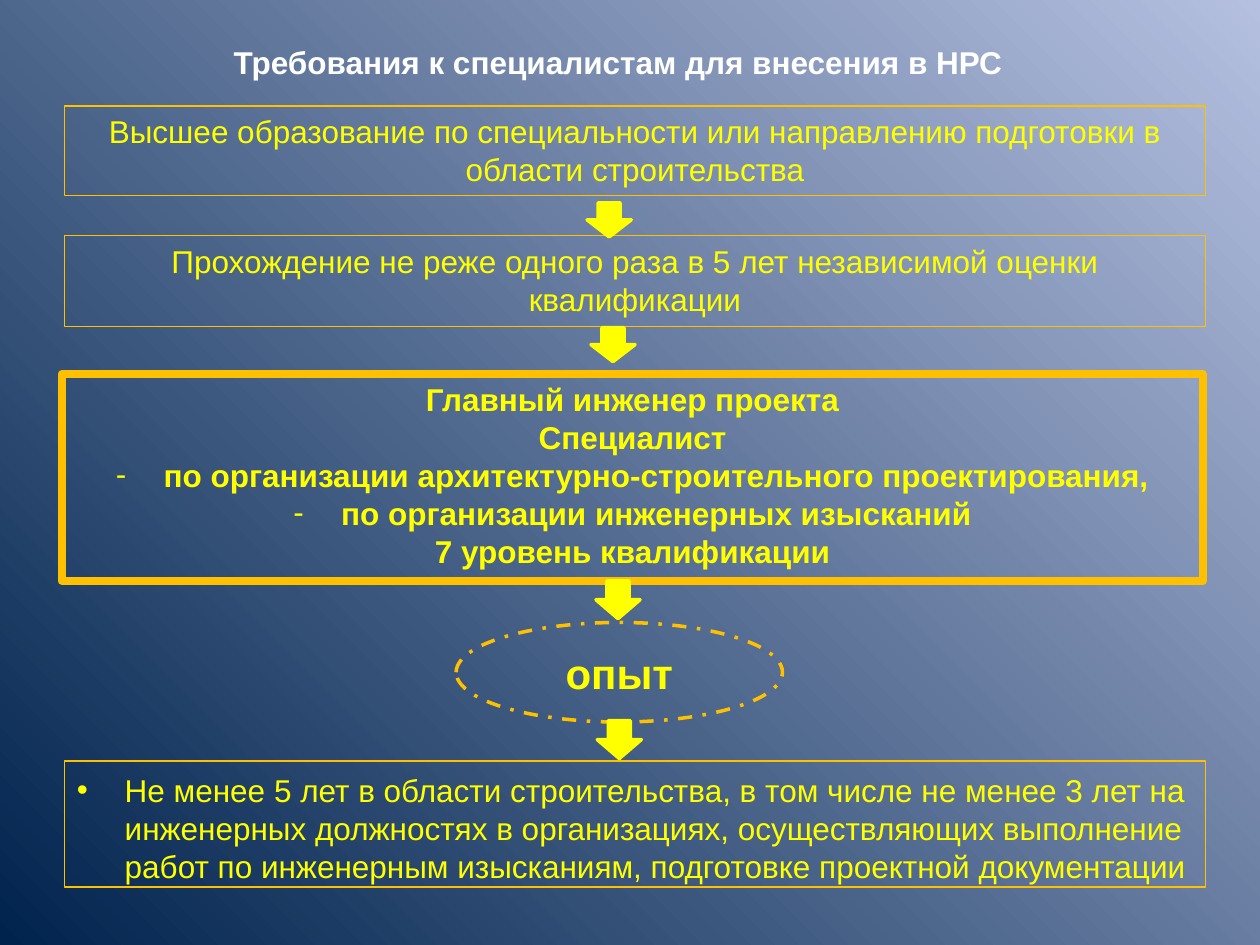
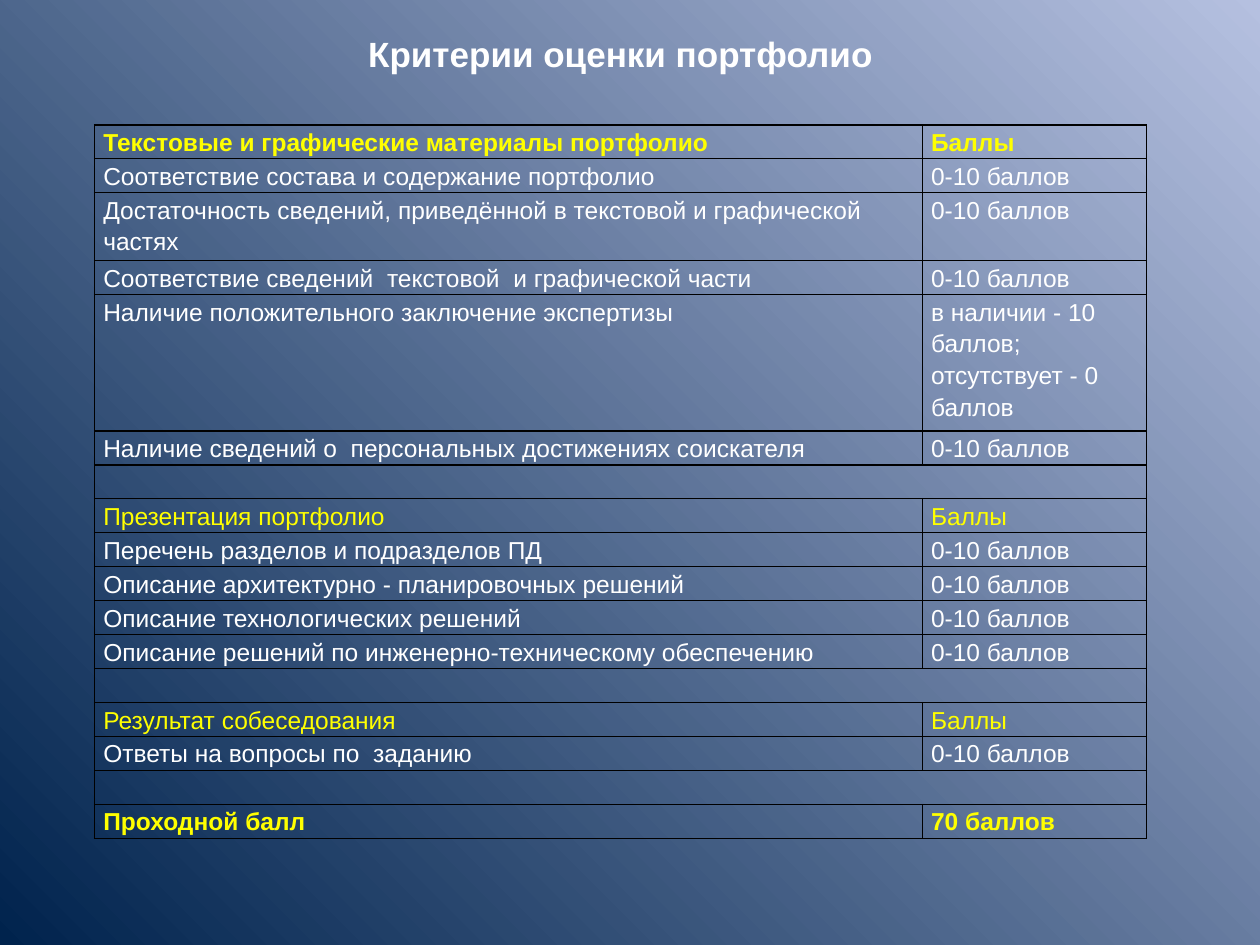
from dataclasses import dataclass
from typing import Optional

from lxml import etree
from pptx import Presentation
from pptx.dml.color import RGBColor
from pptx.enum import dml, shapes, text
from pptx.oxml import parse_xml
from pptx.oxml.ns import qn
from pptx.util import Inches, Pt

FONT = "Arial"
YELLOW, GOLD, WHITE, BLACK = "FFFF00", "FFC000", "FFFFFF", "000000"
GRADIENT = [(0, "BFC9E5"), (0, "B5C0E0"), (100, "00234D")]
A_NS = "http://schemas.openxmlformats.org/drawingml/2006/main"
CENTER, LEFT = text.PP_ALIGN.CENTER, text.PP_ALIGN.LEFT
TOP, MIDDLE = text.MSO_ANCHOR.TOP, text.MSO_ANCHOR.MIDDLE
RECT, OVAL = shapes.MSO_SHAPE.RECTANGLE, shapes.MSO_SHAPE.OVAL
ROW_H = 0.27
POINTS = "0-10 баллов"


@dataclass
class Line:
    text: str
    bullet: str = ""


@dataclass
class Box:
    left: float
    top: float
    width: float
    height: float
    lines: list[Line]
    size: float = 18
    bold: bool = False
    border: float = 0.75
    shape: shapes.MSO_SHAPE = RECT
    dash: Optional[dml.MSO_LINE] = None
    anchor: text.MSO_ANCHOR = TOP


@dataclass
class Arrow:
    left: float
    top: float
    height: float


@dataclass
class Row:
    label: str = ""
    score: str = POINTS
    color: str = WHITE
    bold: bool = False
    units: int = 1


BOXES = [
    Box(0.51, 0.84, 9.06, 0.71, [
        Line("Высшее образование по специальности или направлению подготовки в области строительства")]),
    Box(0.51, 1.87, 9.06, 0.72, [
        Line("Прохождение не реже одного раза в 5 лет независимой оценки квалификации")]),
    Box(0.49, 2.97, 9.06, 1.64, [
        Line("Главный инженер проекта"),
        Line("Специалист"),
        Line("по организации архитектурно-строительного проектирования,", "-"),
        Line("по организации инженерных изысканий", "-"),
        Line("7 уровень квалификации"),
    ], bold=True, border=4.5),
    Box(3.62, 4.94, 2.59, 0.79, [Line("опыт")], size=24, bold=True, border=2,
        shape=OVAL, dash=dml.MSO_LINE.DASH_DOT, anchor=MIDDLE),
]
EXPERIENCE = Line(
    "Не менее 5 лет в области строительства, в том числе не менее 3 лет на инженерных "
    "должностях в организациях, осуществляющих выполнение работ по инженерным изысканиям, "
    "подготовке проектной документации", "•")
ARROWS = [Arrow(4.66, 1.61, 0.27), Arrow(4.69, 2.6, 0.27),
          Arrow(4.73, 4.61, 0.3), Arrow(4.74, 5.72, 0.3)]
GAP = Row(score="")
ROWS = [
    Row("Текстовые и графические материалы портфолио", "Баллы", YELLOW, True),
    Row("Соответствие состава и содержание портфолио"),
    Row("Достаточность сведений, приведённой в текстовой и графической частях", units=2),
    Row("Соответствие сведений  текстовой  и графической части"),
    Row("Наличие положительного заключение экспертизы",
        "в наличии - 10 баллов; отсутствует - 0 баллов", units=4),
    Row("Наличие сведений о  персональных достижениях соискателя"),
    GAP,
    Row("Презентация портфолио", "Баллы", YELLOW),
    Row("Перечень разделов и подразделов ПД"),
    Row("Описание архитектурно - планировочных решений"),
    Row("Описание технологических решений"),
    Row("Описание решений по инженерно-техническому обеспечению"),
    GAP,
    Row("Результат собеседования", "Баллы", YELLOW),
    Row("Ответы на вопросы по  заданию"),
    GAP,
    Row("Проходной балл", "70 баллов", YELLOW, True),
]


def rgb(color: str) -> RGBColor:
    return RGBColor.from_string(color)


def set_background(prs) -> None:
    fill = prs.slide_master.background.fill
    fill.solid()
    solid = prs.slide_master.element.find(".//" + qn("a:solidFill"))
    stops = "".join(f'<a:gs pos="{pos * 1000}"><a:srgbClr val="{color}"/></a:gs>'
                    for pos, color in GRADIENT)
    solid.getparent().replace(solid, parse_xml(
        f'<a:gradFill xmlns:a="{A_NS}" rotWithShape="1"><a:gsLst>{stops}</a:gsLst>'
        '<a:path path="circle"><a:fillToRect l="100000" b="100000"/></a:path></a:gradFill>'))


def place(sp, left: float, top: float, width: float, height: float) -> None:
    sp.left, sp.top = Inches(left), Inches(top)
    sp.width, sp.height = Inches(width), Inches(height)


def add_run(p, content: str, size: float, color: str, bold: bool) -> None:
    r = p.add_run()
    r.text = content
    r.font.name, r.font.size, r.font.bold = FONT, Pt(size), bold
    r.font.color.rgb = rgb(color)


def add_bullet(p, char: str) -> None:
    pPr = p._p.get_or_add_pPr()
    pPr.set("marL", str(Inches(0.38)))
    pPr.set("indent", str(Inches(-0.38)))
    etree.SubElement(pPr, qn("a:buFont")).set("typeface", FONT)
    etree.SubElement(pPr, qn("a:buChar")).set("char", char)


def write(tf, lines: list[Line], size: float, color: str, bold: bool,
          align: text.PP_ALIGN = CENTER, anchor: text.MSO_ANCHOR = TOP) -> None:
    tf.word_wrap = True
    tf.auto_size = text.MSO_AUTO_SIZE.NONE
    tf.vertical_anchor = anchor
    for i, line in enumerate(lines):
        p = tf.add_paragraph() if i else tf.paragraphs[0]
        if line.bullet:
            add_bullet(p, line.bullet)
        p.alignment, p.space_before = align, Pt(0)
        add_run(p, line.text, size, color, bold)


def set_title(s, content: str, left: float, top: float, size: float) -> None:
    place(s.shapes.title, left, top, 7.25, 0.47)
    write(s.shapes.title.text_frame, [Line(content)], size, WHITE, True)


def outline(sp, color: str, width: float) -> None:
    sp.line.color.rgb = rgb(color)
    sp.line.width = Pt(width)


def draw_box(s, box: Box) -> None:
    sp = s.shapes.add_shape(box.shape, *map(Inches, (box.left, box.top, box.width, box.height)))
    sp.shadow.inherit = False
    sp.fill.background()
    outline(sp, GOLD, box.border)
    if box.dash:
        sp.line.dash_style = box.dash
    write(sp.text_frame, box.lines, box.size, YELLOW, box.bold, anchor=box.anchor)


def draw_arrow(s, arrow: Arrow) -> None:
    sp = s.shapes.add_shape(shapes.MSO_SHAPE.DOWN_ARROW,
                            *map(Inches, (arrow.left, arrow.top, 0.35, arrow.height)))
    sp.shadow.inherit = False
    sp.fill.solid()
    sp.fill.fore_color.rgb = rgb(YELLOW)
    outline(sp, YELLOW, 2)


def format_cell(cell, content: str, row: Row) -> None:
    tcPr = cell._tc.get_or_add_tcPr()
    for side in ("lnL", "lnR", "lnT", "lnB"):
        tcPr.append(parse_xml(
            f'<a:{side} xmlns:a="{A_NS}" w="{Pt(1)}"><a:solidFill>'
            f'<a:srgbClr val="{BLACK}"/></a:solidFill></a:{side}>'))
    cell.fill.background()
    cell.margin_left = cell.margin_right = Inches(0.07)
    cell.margin_top = cell.margin_bottom = 0
    p = cell.text_frame.paragraphs[0]
    p.line_spacing = 1.15
    if content:
        add_run(p, content, 14, row.color, row.bold)
    else:
        etree.SubElement(p._p, qn("a:endParaRPr")).set("sz", "1400")


def draw_table(s) -> None:
    height = ROW_H * sum(row.units for row in ROWS)
    table = s.shapes.add_table(len(ROWS), 2, *map(Inches, (0.75, 0.99, 8.35, height))).table
    table.first_row = table.horz_banding = False
    for column, width in zip(table.columns, (6.57, 1.78)):
        column.width = Inches(width)
    for i, row in enumerate(ROWS):
        table.rows[i].height = Inches(ROW_H * row.units)
        for j, content in enumerate((row.label, row.score)):
            format_cell(table.cell(i, j), content, row)
        if not row.label:
            table.cell(i, 0).merge(table.cell(i, 1))


def requirements_slide(prs) -> None:
    s = prs.slides.add_slide(prs.slide_layouts[1])
    set_title(s, "Требования к специалистам для внесения в НРС", 1.28, 0.29, 18)
    body = s.placeholders[1]
    place(body, 0.51, 6.04, 9.06, 1)
    outline(body, GOLD, 0.75)
    write(body.text_frame, [EXPERIENCE], 18, YELLOW, False, LEFT)
    body.text_frame.margin_top = Inches(0.08)
    for box in BOXES:
        draw_box(s, box)
    for arrow in ARROWS:
        draw_arrow(s, arrow)


def criteria_slide(prs) -> None:
    s = prs.slides.add_slide(prs.slide_layouts[5])
    set_title(s, "Критерии оценки портфолио", 1.3, 0.21, 20)
    draw_table(s)


def main() -> None:
    prs = Presentation()
    prs.slide_width, prs.slide_height = Inches(10), Inches(7.5)
    set_background(prs)
    requirements_slide(prs)
    criteria_slide(prs)
    prs.save("out.pptx")


if __name__ == "__main__":
    main()
